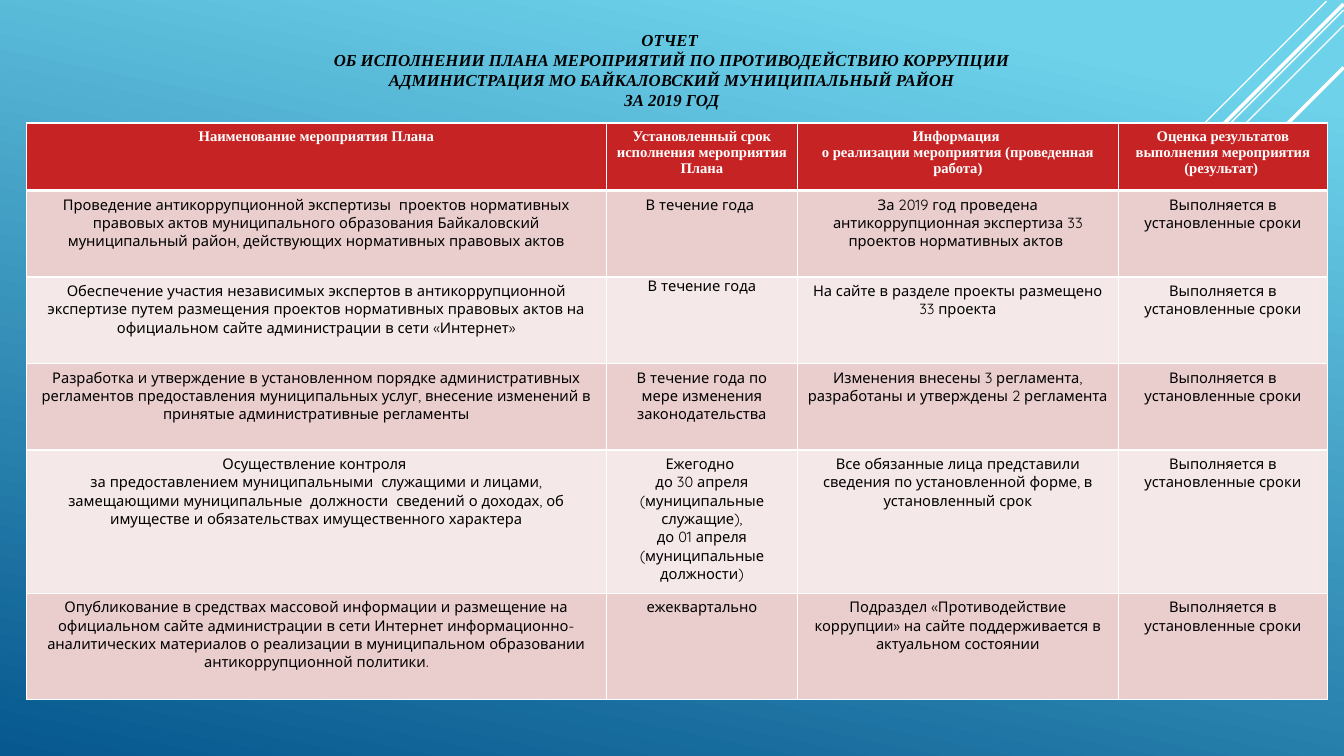
from lxml import etree
from pptx import Presentation
from pptx.dml.color import RGBColor
from pptx.enum.shapes import MSO_CONNECTOR
from pptx.enum.text import MSO_ANCHOR, PP_ALIGN
from pptx.oxml.ns import qn
from pptx.util import Cm, Pt

STRAIGHT = MSO_CONNECTOR.STRAIGHT
BOTTOM = MSO_ANCHOR.BOTTOM
CENTER = PP_ALIGN.CENTER

WHITE = RGBColor(0xFF, 0xFF, 0xFF)
BLACK = RGBColor(0, 0, 0)
RED = RGBColor(0xC6, 0x23, 0x24)
ROSE = RGBColor(0xEA, 0xCD, 0xCD)
PALE_ROSE = RGBColor(0xF5, 0xE8, 0xE8)
SKY = RGBColor(0x6E, 0xD2, 0xEB)
OCEAN = RGBColor(0x06, 0x58, 0x8E)

SERIF = "Times New Roman"
SANS = "Quicksand"

RAYS = [
    (33.43, 0.03, 10.57, 1),
    (33.86, 0.25, 16.89, 1),
    (33.86, 0.64, 13.77, 1),
    (33.86, 0.1, 13.46, 2.5),
    (33.86, 1.7, 12.07, 2.5),
]

TITLE = (
    "ОТЧЕТ \vОБ ИСПОЛНЕНИИ ПЛАНА МЕРОПРИЯТИЙ ПО ПРОТИВОДЕЙСТВИЮ КОРРУПЦИИ"
    "\vАДМИНИСТРАЦИЯ МО БАЙКАЛОВСКИЙ МУНИЦИПАЛЬНЫЙ РАЙОН\vЗА 2019 ГОД"
)

HEADINGS = [
    "Наименование мероприятия Плана",
    "Установленный срок исполнения мероприятия Плана",
    "Информация \vо реализации мероприятия (проведенная работа)",
    "Оценка результатов выполнения мероприятия (результат) ",
]
RESULT = "Выполняется в установленные сроки"
MEASURES = [
    ("Проведение антикоррупционной экспертизы  проектов нормативных правовых актов "
     "муниципального образования Байкаловский муниципальный район, действующих "
     "нормативных правовых актов",
     "В течение года ",
     "За 2019 год проведена антикоррупционная экспертиза 33 проектов нормативных актов "),
    ("Обеспечение участия независимых экспертов в антикоррупционной экспертизе путем "
     "размещения проектов нормативных правовых актов на официальном сайте "
     "администрации в сети «Интернет»",
     "В течение года",
     "На сайте в разделе проекты размещено 33 проекта"),
    ("Разработка и утверждение в установленном порядке административных регламентов "
     "предоставления муниципальных услуг, внесение изменений в принятые "
     "административные регламенты",
     "В течение года по мере изменения законодательства",
     "Изменения внесены 3 регламента, разработаны и утверждены 2 регламента"),
    ("Осуществление контроля \nза предоставлением муниципальными  служащими и лицами, "
     "замещающими муниципальные  должности  сведений о доходах, об имуществе и "
     "обязательствах имущественного характера",
     "Ежегодно \nдо 30 апреля (муниципальные служащие),\nдо 01 апреля\n"
     "(муниципальные должности)",
     "Все обязанные лица представили сведения по установленной форме, "
     "в установленный срок"),
    ("Опубликование в средствах массовой информации и размещение на официальном сайте "
     "администрации в сети Интернет информационно-аналитических материалов о "
     "реализации в муниципальном образовании антикоррупционной политики.",
     "ежеквартально",
     "Подраздел «Противодействие коррупции» на сайте поддерживается в актуальном "
     "состоянии"),
]
COLUMN_WIDTHS = [14.63, 4.8, 8.1, 5.26]
ROW_HEIGHTS = [1.7, 2.18, 2.18, 2.18, 3.61, 2.67]


class ReportSlide:
    def __init__(self, slide):
        self.slide = slide

    def background(self, start, end, angle):
        fill = self.slide.background.fill
        fill.gradient()
        fill.gradient_angle = angle
        for stop, color, position in zip(fill.gradient_stops, (start, end), (0.1, 1)):
            stop.color.rgb = color
            stop.position = position

    def ray(self, x, y, reach, weight):
        ray = self.slide.shapes.add_connector(
            STRAIGHT, Cm(x), Cm(y), Cm(x - reach), Cm(y + reach))
        ray.line.color.rgb = WHITE
        ray.line.width = Pt(weight)
        etree.SubElement(ray._element.spPr, qn("a:effectLst"))

    def set_text(self, frame, text, font, size, color, bold=False, italic=False):
        frame.text = text
        frame.word_wrap = True
        for paragraph in frame.paragraphs:
            paragraph.alignment = CENTER
            for run in paragraph.runs:
                run.font.name = font
                run.font.size = Pt(size)
                run.font.color.rgb = color
                run.font.bold = bold
                run.font.italic = italic

    def title(self, text, left, top, width, height):
        box = self.slide.shapes.add_textbox(Cm(left), Cm(top), Cm(width), Cm(height))
        self.set_text(box.text_frame, text, SERIF, 12, BLACK, bold=True, italic=True)
        box.text_frame.vertical_anchor = BOTTOM

    def border(self, cell, side, weight):
        edge = etree.SubElement(cell._tc.get_or_add_tcPr(), qn(f"a:ln{side}"),
                                w=str(Pt(weight)))
        paint = etree.SubElement(edge, qn("a:solidFill"))
        etree.SubElement(paint, qn("a:srgbClr"), val=str(WHITE))

    def table(self, rows, left, top):
        table = self.slide.shapes.add_table(
            len(rows), len(COLUMN_WIDTHS), Cm(left), Cm(top),
            Cm(sum(COLUMN_WIDTHS)), Cm(sum(ROW_HEIGHTS))).table
        table.horz_banding = False
        for column, width in zip(table.columns, COLUMN_WIDTHS):
            column.width = Cm(width)
        for r, (row, height) in enumerate(zip(rows, ROW_HEIGHTS)):
            table.rows[r].height = Cm(height)
            for c, text in enumerate(row):
                self.cell(table.cell(r, c), text, r)
        return table

    def cell(self, cell, text, r):
        heading = r == 0
        for side in "LRTB":
            thick = (r, side) in ((0, "B"), (1, "T"))
            self.border(cell, side, 3 if thick else 1)
        cell.fill.solid()
        cell.fill.fore_color.rgb = RED if heading else ROSE if r % 2 else PALE_ROSE
        self.set_text(cell.text_frame, text, SERIF if heading else SANS, 10.5,
                      WHITE if heading else BLACK, bold=heading)


def main():
    deck = Presentation()
    deck.slide_width, deck.slide_height = Cm(33.87), Cm(19.05)
    report = ReportSlide(deck.slides.add_slide(deck.slide_layouts[6]))
    report.background(SKY, OCEAN, 258)
    for ray in RAYS:
        report.ray(*ray)
    report.title(TITLE, 7.47, 0.33, 18.92, 2.57)
    rows = [HEADINGS] + [(*measure, RESULT) for measure in MEASURES]
    measures = report.table(rows, 0.66, 3.1)
    deadline = measures.cell(2, 1)
    deadline.margin_left = deadline.margin_right = Cm(0.18)
    deadline.margin_top = deadline.margin_bottom = 0
    deck.save("out.pptx")


if __name__ == "__main__":
    main()
